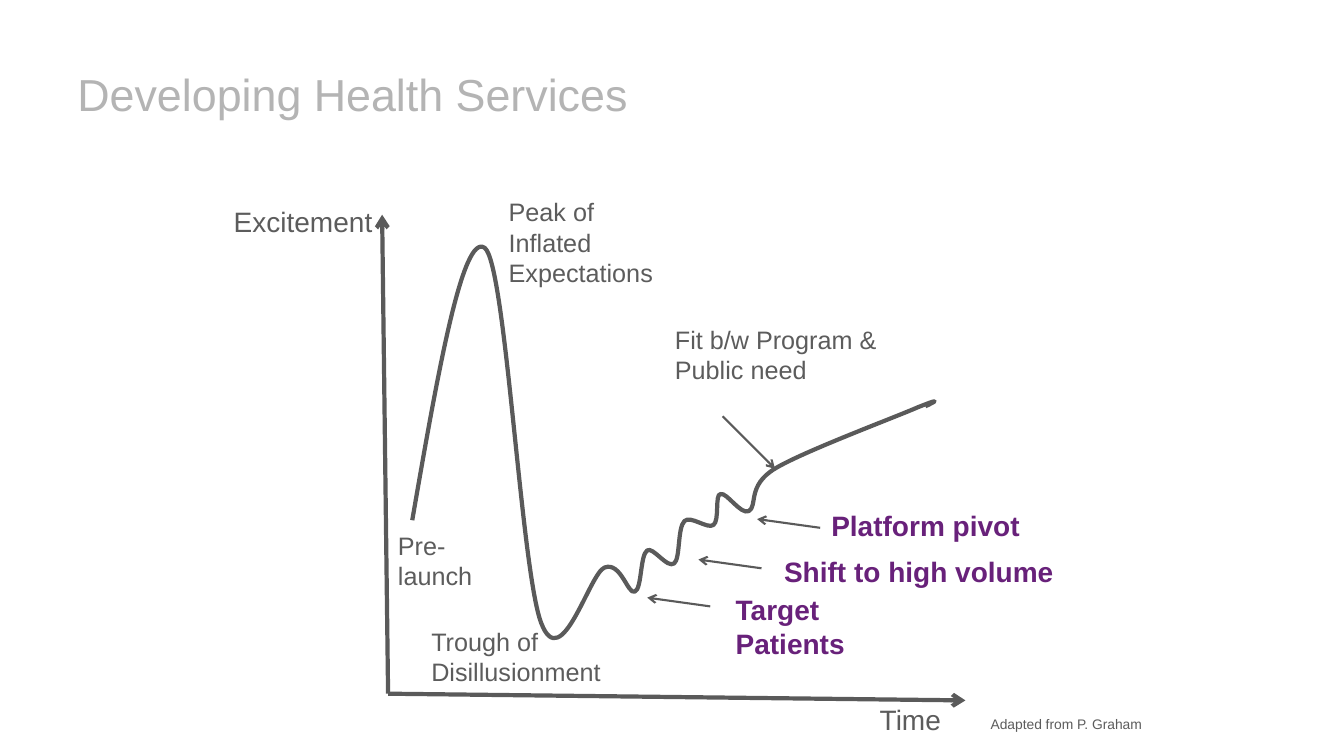
"""Build the slide on the excitement curve of health services."""
from pptx import Presentation
from pptx.dml.color import RGBColor as RGB
from pptx.enum.shapes import MSO_CONNECTOR as Link
from pptx.enum.text import MSO_ANCHOR as Anchor, MSO_AUTO_SIZE as Auto, PP_ALIGN as Align
from pptx.oxml.ns import qn
from pptx.util import Cm, Pt
from lxml.etree import SubElement as Sub

HUES = {"line": "5A5A5A", "text": "5C5C5C", "pivot": "68217A", "title": "B4B4B4"}

FORMS = {
    "title": {"size": Pt(32)},
    "axis": {"size": Pt(20)},
    "text": {"size": Pt(18)},
    "pivot": {"size": Pt(20), "bold": True},
    "credit": {"size": Pt(9.9)},
}

LABELS = [
    ("Excitement", "axis", (5.64, 5.03, 4.65, 1.12)),
    ("Time", "axis", (21.92, 17.58, 3.86, 1.12)),
    ("Peak of Inflated Expectations", "text", (12.57, 4.83, 4.42, 2.57)),
    ("Trough of Disillusionment", "text", (10.62, 15.65, 6.96, 1.8)),
    ("Fit b/w Program &\nPublic need", "text", (16.76, 8.05, 6.45, 1.8)),
    ("Pre-launch", "text", (9.78, 13.23, 3.07, 1.8)),
    ("Target Patients", "pivot", (18.29, 14.81, 4.9, 1.96)),
    ("Shift to high volume", "pivot", (19.51, 13.84, 7.37, 1.12)),
    ("Platform pivot", "pivot", (20.7, 12.7, 7.42, 1.12)),
]

START = (10.39, 13.11)
BENDS = [
    ((11.02, 9.47), (11.66, 5.82), (12.22, 6.25)),
    ((12.75, 6.68), (13.13, 14.38), (13.64, 15.7)),
    ((14.15, 17.04), (14.86, 14.43), (15.24, 14.3)),
    ((15.65, 14.15), (15.82, 14.99), (16, 14.91)),
    ((16.18, 14.83), (16.13, 14), (16.31, 13.87)),
    ((16.46, 13.77), (16.81, 14.33), (16.99, 14.2)),
    ((17.15, 14.07), (17.07, 13.31), (17.25, 13.13)),
    ((17.4, 12.98), (17.83, 13.34), (17.98, 13.23)),
    ((18.14, 13.11), (18.01, 12.45), (18.16, 12.45)),
    ((18.31, 12.4), (18.67, 12.98), (18.87, 12.88)),
    ((19.1, 12.75), (18.82, 12.24), (19.53, 11.81)),
    ((20.24, 11.38), (22.5, 10.54), (23.14, 10.26)),
    ((23.77, 10.01), (23.55, 10.13), (23.32, 10.24)),
]

ORIGIN = (9.78, 17.48)
ENDS = [(9.63, 5.41), (24.33, 17.65)]
FIT = (19.53, 11.81)
TIPS = [(16.31, 15.06), (17.6, 14.1), (19.08, 13.08)]


class Deck:
    def __init__(self, font, hues):
        self.font, self.hues = font, hues
        self.show = Presentation()
        self.show.slide_width, self.show.slide_height = Cm(33.87), Cm(19.05)
        self.slide = self.show.slides.add_slide(self.show.slide_layouts[6])
        self.shapes = self.slide.shapes

    def hue(self, name):
        return RGB.from_string(self.hues[name])

    def ink(self, line, width):
        line.color.rgb = self.hue("line")
        line.width = Pt(width)

    def label(self, text, form, box, hue="text", align=Align.LEFT,
              anchor=Anchor.TOP, fit=Auto.SHAPE_TO_FIT_TEXT):
        frame = self.shapes.add_textbox(*map(Cm, box)).text_frame
        frame.text = text
        frame.word_wrap = True
        frame.auto_size = fit
        frame.vertical_anchor = anchor
        for para in frame.paragraphs:
            para.alignment = align
            for run in para.runs:
                for key, value in {"name": self.font, **FORMS[form]}.items():
                    setattr(run.font, key, value)
                run.font.color.rgb = self.hue(hue)

    def arrow(self, tail, tip, width):
        link = self.shapes.add_connector(Link.STRAIGHT, *map(Cm, tail + tip))
        self.ink(link.line, width)
        Sub(link.line._get_or_add_ln(), qn("a:tailEnd"), type="arrow")
        Sub(link._element.spPr, qn("a:effectLst"))

    def curve(self, start, bends, width):
        pen = self.shapes.build_freeform(*map(Cm, start))
        pen.add_line_segments([tuple(map(Cm, spot)) for bend in bends for spot in bend],
                              close=False)
        shape = pen.convert_to_shape()
        steps = list(shape._element.iter(qn("a:lnTo")))
        for first, *rest in zip(*[iter(steps)] * 3):
            first.tag = qn("a:cubicBezTo")
            for step in rest:
                first.append(step[0])
                step.getparent().remove(step)
        shape.fill.background()
        shape.shadow.inherit = False
        self.ink(shape.line, width)


def main():
    deck = Deck("Arial", HUES)
    for end in ENDS:
        deck.arrow(ORIGIN, end, 3)
    deck.curve(START, BENDS, 3)
    deck.arrow((FIT[0] - 1.32, FIT[1] - 1.32), FIT, 1.5)
    for left, top in TIPS:
        deck.arrow((left + 1.59, top + 0.22), (left, top), 1.5)
    for text, form, box in LABELS:
        deck.label(text, form, box, "pivot" if form == "pivot" else "text")
    deck.label("Developing Health Services", "title", (1.7, 0.76, 30.48, 3.18),
               "title", anchor=Anchor.MIDDLE, fit=Auto.NONE)
    deck.label("Adapted from P. Graham", "credit", (24.41, 17.81, 4.62, 0.89),
               align=Align.RIGHT, anchor=Anchor.MIDDLE, fit=Auto.NONE)
    deck.show.save("out.pptx")


if __name__ == "__main__":
    main()
